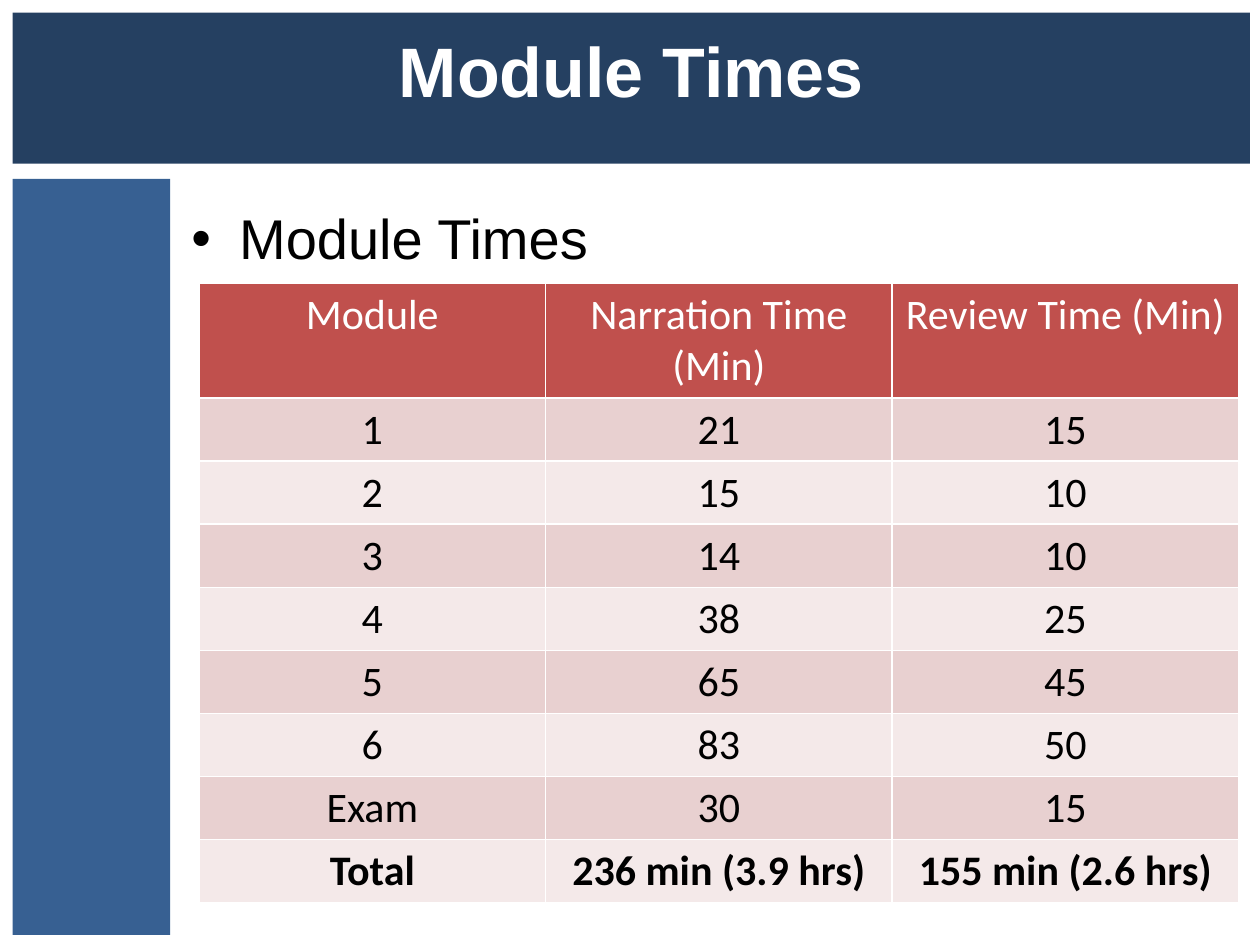
from lxml import etree
from pptx import Presentation
from pptx.dml.color import RGBColor
from pptx.enum import shapes, text
from pptx.oxml.ns import qn
from pptx.util import Inches, Pt

# Content
TITLE = "Module Times"
BULLET = "Module Times"
ROWS = [
    ("Module", "Narration Time (Min)", "Review Time (Min)"),
    ("1", "21", "15"),
    ("2", "15", "10"),
    ("3", "14", "10"),
    ("4", "38", "25"),
    ("5", "65", "45"),
    ("6", "83", "50"),
    ("Exam", "30", "15"),
    ("Total", "236 min (3.9 hrs)", "155 min (2.6 hrs)"),
]
COLORS = {
    "banner": "254061", "sidebar": "376092", "header": "C0504D",
    "odd": "E8D0D0", "even": "F4E9E9", "white": "FFFFFF", "black": "000000",
}
HEADER_H, ROW_H, COL_W = 0.91, 0.5, 2.75


def rgb(name):
    return RGBColor.from_string(COLORS[name])


def style(p, font, size, color, bold=False):
    for r in p.runs:
        r.font.name, r.font.size, r.font.bold = font, Pt(size), bold
        r.font.color.rgb = rgb(color)


def add_panel(slide, box, color):
    sp = slide.shapes.add_shape(shapes.MSO_SHAPE.RECTANGLE, *map(Inches, box))
    sp.shadow.inherit = False
    sp.fill.solid()
    sp.fill.fore_color.rgb = rgb(color)
    sp.line.fill.background()


def add_text(slide, box, words):
    tf = slide.shapes.add_textbox(*map(Inches, box)).text_frame
    tf.word_wrap = True
    tf.text = words
    return tf


def set_borders(cell):
    tc_pr = cell._tc.get_or_add_tcPr()
    for i, side in enumerate(("a:lnL", "a:lnR", "a:lnT", "a:lnB")):
        ln = etree.Element(qn(side), w=str(Pt(1)))
        fill = etree.SubElement(ln, qn("a:solidFill"))
        etree.SubElement(fill, qn("a:srgbClr"), val=COLORS["white"])
        tc_pr.insert(i, ln)


prs = Presentation()
prs.slide_width, prs.slide_height = Inches(10), Inches(7.5)
s = prs.slides.add_slide(prs.slide_layouts[6])

# Banner and sidebar
add_panel(s, (0.1, 0.1, 9.82, 1.2), "banner")
add_panel(s, (0.1, 1.42, 1.25, 6), "sidebar")

# Title
tf = add_text(s, (0.1, 0.1, 9.82, 0.9), TITLE)
tf.vertical_anchor = text.MSO_ANCHOR.MIDDLE
p = tf.paragraphs[0]
p.alignment = text.PP_ALIGN.CENTER
style(p, "Arial", 40, "white", bold=True)

# Bullet
p = add_text(s, (1.42, 1.57, 8.33, 5.77), BULLET).paragraphs[0]
p_pr = p._p.get_or_add_pPr()
p_pr.set("marL", str(Inches(0.38)))
p_pr.set("indent", str(-Inches(0.38)))
etree.SubElement(p_pr, qn("a:buFont"), typeface="Arial")
etree.SubElement(p_pr, qn("a:buChar"), char="•")
style(p, "Arial", 32, "black")

# Table of times
n_cols = len(ROWS[0])
height = HEADER_H + ROW_H * (len(ROWS) - 1)
table = s.shapes.add_table(
    len(ROWS), n_cols, Inches(1.58), Inches(2.25),
    Inches(COL_W * n_cols), Inches(height)).table
for col in table.columns:
    col.width = Inches(COL_W)
for i, values in enumerate(ROWS):
    is_header, is_total = i == 0, i == len(ROWS) - 1
    table.rows[i].height = Inches(HEADER_H if is_header else ROW_H)
    band = "header" if is_header else ("odd" if i % 2 else "even")
    for j, value in enumerate(values):
        cell = table.cell(i, j)
        cell.text = value
        cell.fill.solid()
        cell.fill.fore_color.rgb = rgb(band)
        set_borders(cell)
        p = cell.text_frame.paragraphs[0]
        p.alignment = text.PP_ALIGN.CENTER
        style(p, "Calibri", 24, "white" if is_header else "black", is_total)

prs.save("out.pptx")
